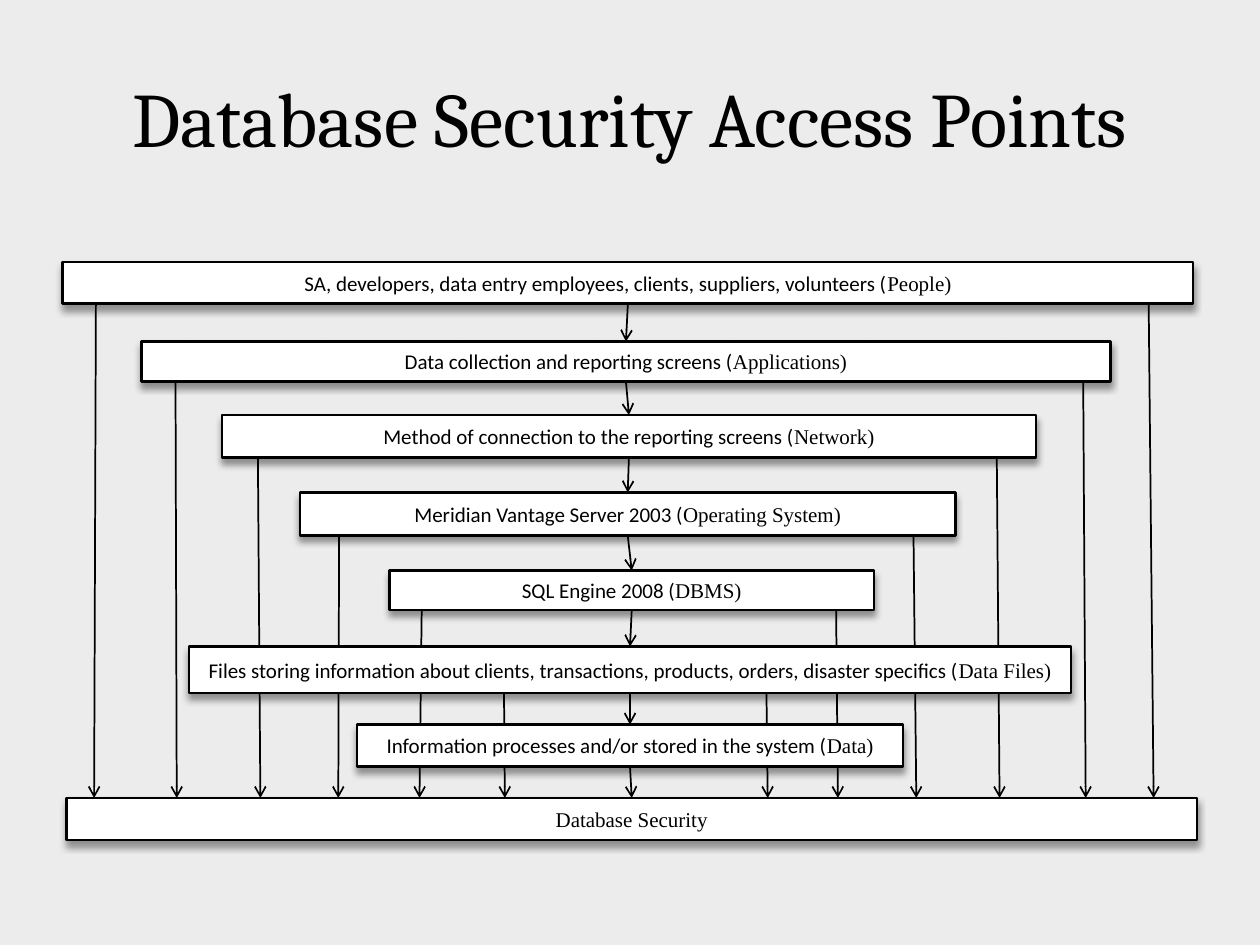
from lxml import etree
from pptx import Presentation
from pptx.dml.color import RGBColor
from pptx.enum import shapes, text
from pptx.oxml import ns
from pptx.util import Pt

TITLE = "Database Security Access Points"
LAYERS = [
    ("SA, developers, data entry employees, clients, suppliers, volunteers (", "People)",
     (35.8, 149.8, 646, 23.8), [(54.8, 53.8), (656.4, 659.2)]),
    ("Data collection and reporting screens (", "Applications)",
     (80.8, 195.2, 553.8, 22.8), [(100.3, 101), (619, 620.4)]),
    ("Method of connection to the reporting screens (", "Network)",
     (126.8, 237.2, 465.2, 24.4), [(147.4, 148.8), (569.6, 571.2)]),
    ("Meridian Vantage Server 2003 (", "Operating System)",
     (171.4, 281.4, 374.6, 24.6), [(193.8, 193.3), (522, 523.6)]),
    ("SQL Engine 2008 (", "DBMS)",
     (222.5, 326, 277, 22.6), [(241, 239.7), (477.8, 478.8)]),
    ("Files storing information about clients, transactions, products, orders, disaster specifics (",
     "Data Files)", (108, 369.4, 504, 26.6), [(288, 288.5), (438, 438.7)]),
    ("Information processes and/or stored in the system (", "Data)",
     (204, 414, 312, 24), []),
    ("", "Database Security", (38, 456, 646, 24), []),
]


def color(value):
    return RGBColor.from_string(value)


def write(frame, parts, size):
    frame.word_wrap = True
    frame.vertical_anchor = text.MSO_ANCHOR.MIDDLE
    paragraph = frame.paragraphs[0]
    paragraph.alignment = text.PP_ALIGN.CENTER
    for words, font in parts:
        if words:
            run = paragraph.add_run()
            run.text = words
            run.font.name = font
            run.font.size = Pt(size)
            run.font.color.rgb = color("000000")


def add_shadow(box):
    box.shadow.inherit = False
    effects = box._element.spPr.find(ns.qn("a:effectLst"))
    shadow = etree.SubElement(effects, ns.qn("a:outerShdw"), blurRad=str(Pt(4)),
                              dist=str(Pt(3)), dir="5400000", rotWithShape="0")
    black = etree.SubElement(shadow, ns.qn("a:srgbClr"), val="000000")
    etree.SubElement(black, ns.qn("a:alpha"), val="40000")


def add_arrow(slide, x1, y1, x2, y2):
    arrow = slide.shapes.add_connector(
        shapes.MSO_CONNECTOR.STRAIGHT, Pt(x1), Pt(y1), Pt(x2), Pt(y2))
    arrow.line.width = Pt(1)
    arrow.line.color.rgb = color("000000")
    etree.SubElement(arrow.line._get_or_add_ln(), ns.qn("a:tailEnd"), type="arrow")
    etree.SubElement(arrow._element.spPr, ns.qn("a:effectLst"))
    return arrow


def add_layer(slide, description, label, place):
    box = slide.shapes.add_shape(shapes.MSO_SHAPE.RECTANGLE, *map(Pt, place))
    box.fill.solid()
    box.fill.fore_color.rgb = color("FFFFFF")
    box.line.color.rgb = color("000000")
    box.line.width = Pt(1.5)
    add_shadow(box)
    write(box.text_frame, [(description, "Calibri"), (label, "Times New Roman")], 12)
    return box


def main():
    prs = Presentation()
    prs.slide_width, prs.slide_height = Pt(720), Pt(540)
    slide = prs.slides.add_slide(prs.slide_layouts[6])
    slide.background.fill.solid()
    slide.background.fill.fore_color.rgb = color("ECECEC")

    title = slide.shapes.add_textbox(Pt(36), Pt(21.6), Pt(648), Pt(90))
    write(title.text_frame, [(TITLE, "Cambria")], 44)

    security_top = LAYERS[-1][2][1]
    for _, _, (_, top, _, height), drops in LAYERS:
        for start, end in drops:
            add_arrow(slide, start, top + height, end, security_top)

    boxes = [add_layer(slide, description, label, place)
             for description, label, place, _ in LAYERS]
    for upper, lower in zip(boxes, boxes[1:]):
        step = add_arrow(slide, 0, 0, 0, 0)
        step.begin_connect(upper, 2)
        step.end_connect(lower, 0)

    prs.save("out.pptx")


if __name__ == "__main__":
    main()
